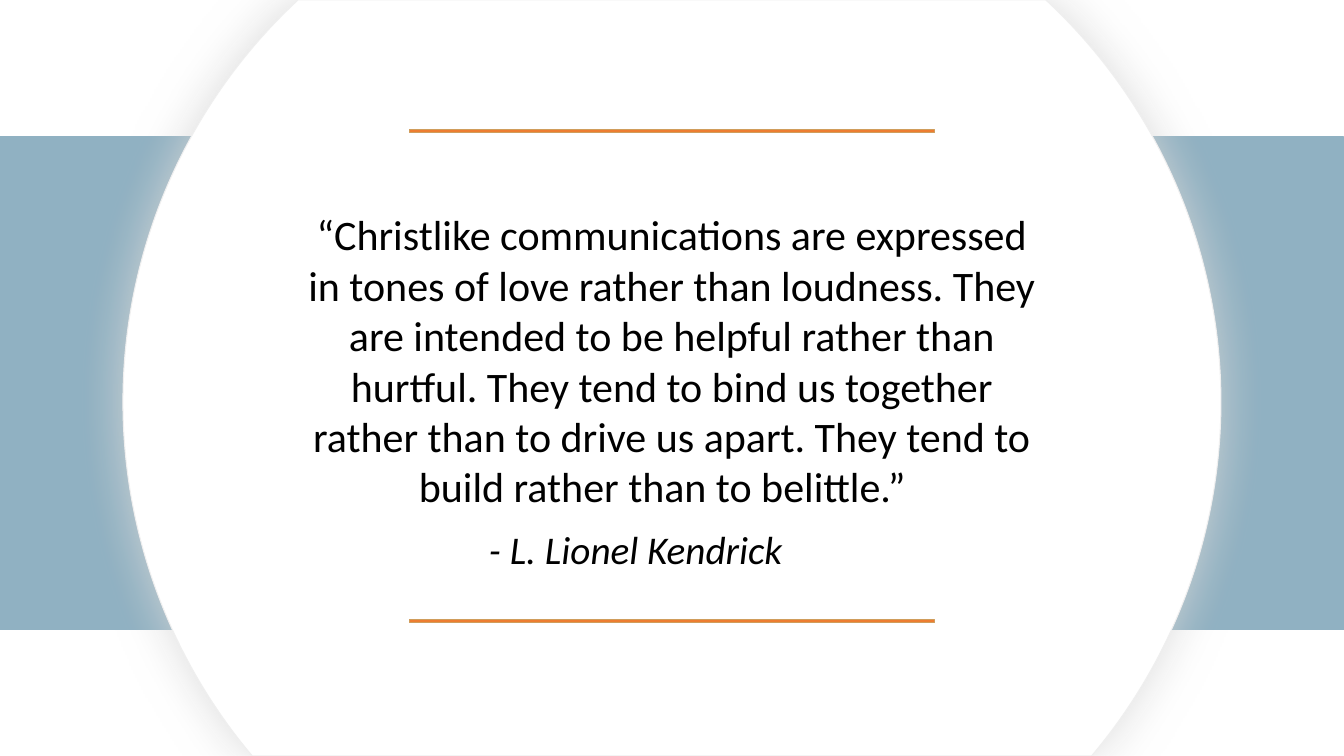
import math

from lxml import etree
from pptx import Presentation
from pptx.dml.color import RGBColor
from pptx.enum.shapes import MSO_SHAPE
from pptx.enum.text import MSO_AUTO_SIZE, PP_ALIGN
from pptx.oxml.ns import qn
from pptx.util import Pt

RECTANGLE = MSO_SHAPE.RECTANGLE
CENTER, LEFT = PP_ALIGN.CENTER, PP_ALIGN.LEFT
GROW = MSO_AUTO_SIZE.SHAPE_TO_FIT_TEXT
SLIDE_W, SLIDE_H = 1344, 756
PX = 12192000 / SLIDE_W
QUOTE = (
    "“Christlike communications are expressed in tones of love rather than "
    "loudness. They are intended to be helpful rather than hurtful. They tend "
    "to bind us together rather than to drive us apart. They tend to build "
    "rather than to belittle.”  "
)


def px(length):
    """Turn pixels into EMU."""
    return round(length * PX)


def color(value):
    """Turn a hex string into a colour."""
    return RGBColor.from_string(value)


def paint(shape, fill, line):
    """Give a shape a plain fill and a thin outline without shadow."""
    shape.shadow.inherit = False
    shape.fill.solid()
    shape.fill.fore_color.rgb = color(fill)
    shape.line.color.rgb = color(line)
    shape.line.width = Pt(0.75)


def add_bar(slide, box, fill, line):
    """Draw a filled rectangle in the box."""
    bar = slide.shapes.add_shape(RECTANGLE, *map(px, box))
    paint(bar, fill, line)


def add_glow(shape, tint, opacity, blur):
    """Put a soft, centred shadow around a shape."""
    effects = shape._element.spPr.find(qn("a:effectLst"))
    shadow = etree.SubElement(
        effects, qn("a:outerShdw"), blurRad=str(Pt(blur)), dist="0", dir="0",
        algn="ctr", rotWithShape="0")
    shade = etree.SubElement(shadow, qn("a:srgbClr"), val=tint)
    etree.SubElement(shade, qn("a:alpha"), val=str(opacity * 1000))


def bend(segment, radius, center, origin, start, end):
    """Turn a straight segment into a circular arc between two angles."""
    handle = 4 / 3 * math.tan((end - start) / 4)
    curve = etree.Element(qn("a:cubicBezTo"))
    for angle, reach in ((start, handle), (end, -handle), (end, 0)):
        x = center[0] + radius * (math.cos(angle) - reach * math.sin(angle))
        y = center[1] + radius * (math.sin(angle) + reach * math.cos(angle))
        etree.SubElement(curve, qn("a:pt"), x=str(px(x - origin[0])),
                         y=str(px(y - origin[1])))
    segment.getparent().replace(segment, curve)


def add_disc(slide, center_x, center_y, radius):
    """Draw the white disc, cut off at the top and bottom of the slide."""
    top = math.asin(-center_y / radius)
    bottom = math.asin((SLIDE_H - center_y) / radius)
    angles = [top, 0, bottom, math.pi - bottom, math.pi, math.pi - top]
    corners = [(px(center_x + radius * math.cos(a)),
                px(center_y + radius * math.sin(a))) for a in angles]
    builder = slide.shapes.build_freeform(*corners[0])
    builder.add_line_segments(corners[1:], close=True)
    disc = builder.convert_to_shape()
    segments = list(disc._element.iter(qn("a:lnTo")))
    for i in (0, 1, 3, 4):
        bend(segments[i], radius, (center_x, center_y),
             (center_x - radius, 0), angles[i], angles[i + 1])
    paint(disc, "FFFFFF", "EFEFEF")
    add_glow(disc, "D8D8D8", 89, 36)


def add_words(slide, box, words, size, align, inset_y, italic=False):
    """Write one paragraph in the box."""
    frame = slide.shapes.add_textbox(*map(px, box)).text_frame
    frame.word_wrap = True
    frame.auto_size = GROW
    frame.margin_left = frame.margin_right = px(10)
    frame.margin_top = frame.margin_bottom = px(inset_y)
    frame.text = words
    paragraph = frame.paragraphs[0]
    paragraph.alignment = align
    font = paragraph.runs[0].font
    font.name, font.size, font.italic = "Calibri", Pt(size), italic
    font.color.rgb = color("000000")


def add_quote(slide, left, top, width, height):
    """Place the quotation and its author between two orange rules."""
    rule_w, rule_h = 525, 3
    rule_left = left + (width - rule_w) / 2
    for rule_top in (top, top + height - rule_h):
        add_bar(slide, (rule_left, rule_top, rule_w, rule_h), "ED7D31", "D09D5C")
    add_words(slide, (left, top + 69, width, 326), QUOTE, 30, CENTER, 10)
    add_words(slide, (left + 183, top + 390, 437, 57),
              "- L. Lionel Kendrick", 28, LEFT, 5, italic=True)


def build_quote_slide(deck):
    """Build the quotation slide."""
    slide = deck.slides.add_slide(deck.slide_layouts[6])
    add_bar(slide, (0, 137, SLIDE_W, 493), "90B1C2", "90B1C2")
    add_disc(slide, SLIDE_W / 2, 402, 549)
    add_quote(slide, 296, 130, 752, 493)


def main():
    """Make the deck and save it."""
    deck = Presentation()
    deck.slide_width, deck.slide_height = px(SLIDE_W), px(SLIDE_H)
    build_quote_slide(deck)
    deck.save("out.pptx")


if __name__ == "__main__":
    main()
